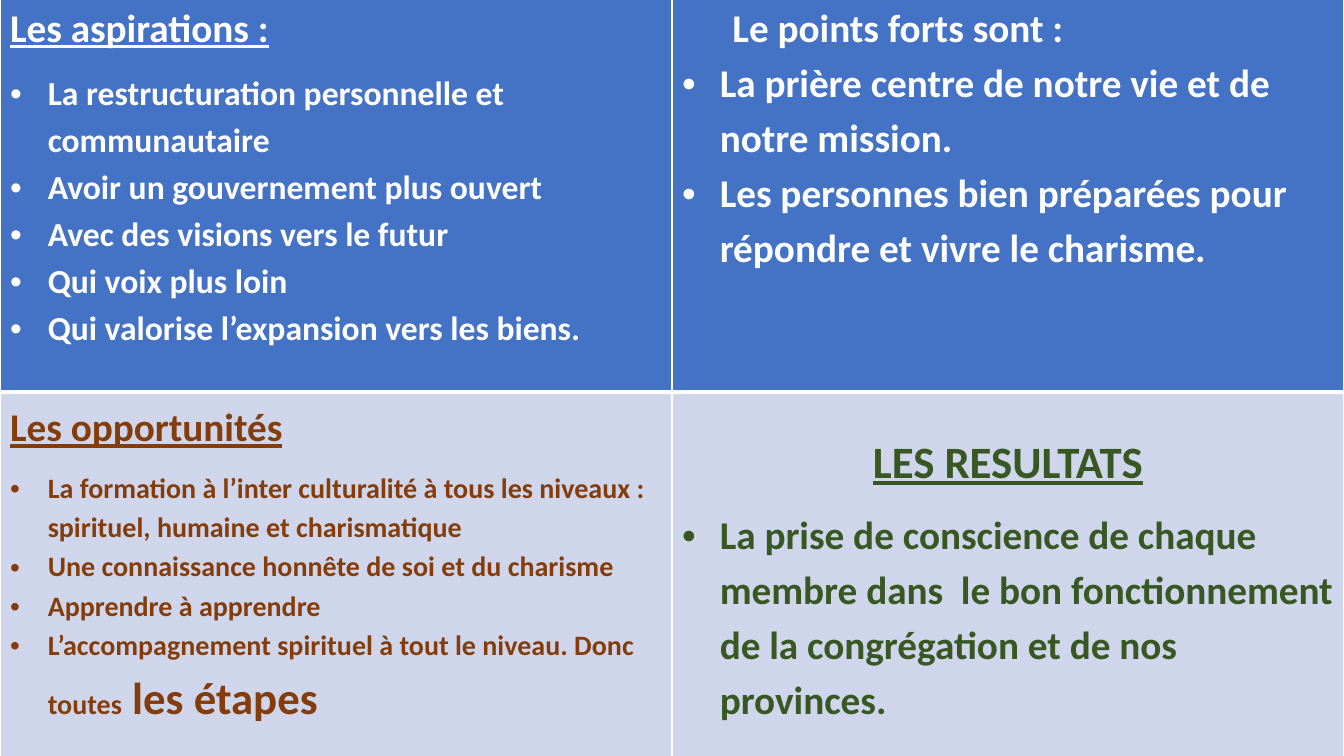
from lxml.etree import SubElement as Sub
from pptx import Presentation
from pptx.dml.color import RGBColor as RGB
from pptx.enum.text import PP_ALIGN as Align
from pptx.oxml.ns import qn
from pptx.util import Cm, Pt

WHITE = RGB(0xFF, 0xFF, 0xFF)
BLUE = RGB(0x44, 0x72, 0xC4)
PALE = RGB(0xCF, 0xD5, 0xEA)
BROWN = RGB(0x84, 0x3C, 0x0B)
GREEN = RGB(0x38, 0x57, 0x23)

HOPES = {
    "head": ("Les aspirations :", 28, True, Align.LEFT, 0, 10),
    "items": [
        [("La restructuration personnelle et communautaire", 24)],
        [("Avoir un gouvernement plus ouvert", 24)],
        [("Avec des visions vers le futur", 24)],
        [("Qui voix plus loin", 24)],
        [("Qui valorise l’expansion vers les biens.", 24)],
    ],
    "after": 10, "ink": WHITE, "fill": BLUE, "top": 0.13,
}
FORCES = {
    "head": ("Le points forts sont :", 28, False, Align.LEFT, 1.27, 0),
    "items": [
        [("La prière centre de notre vie et de notre mission.", 28)],
        [("Les personnes bien préparées pour répondre et vivre le charisme.", 28)],
    ],
    "after": 0, "ink": WHITE, "fill": BLUE, "top": 0.13,
}
CHANCES = {
    "head": ("Les opportunités", 28, True, Align.LEFT, 0, 10),
    "items": [
        [("La formation à l’inter culturalité à tous les niveaux : "
          "spirituel, humaine et charismatique", 20)],
        [("Une connaissance honnête de soi et du charisme", 20)],
        [("Apprendre à apprendre", 20)],
        [("L’accompagnement spirituel à tout le niveau. Donc toutes", 20),
         (" les étapes", 32)],
    ],
    "after": 10, "ink": BROWN, "fill": PALE, "top": 0.13,
}
RESULTS = {
    "head": ("LES RESULTATS", 32, True, Align.CENTER, 0, 10),
    "items": [
        [("La prise de conscience de chaque membre dans  le bon fonctionnement "
          "de la congrégation et de nos provinces.", 28)],
    ],
    "after": 10, "ink": GREEN, "fill": PALE, "top": 0.9,
}
GRID = [[HOPES, FORCES], [CHANCES, RESULTS]]
EDGES = [{"L": 1, "R": 1, "T": 1, "B": 3}, {"L": 1, "R": 1, "B": 1}]
HEIGHTS = [10.06, 10.52]
WIDTH, TOP, INDENT = 16.93, -0.18, 0.95


def add_run(para, text, size, ink, under=False):
    run = para.add_run()
    run.text = text
    font = run.font
    font.name, font.size, font.bold = "Calibri", Pt(size), True
    font.underline = under
    font.color.rgb = ink


def indent(para, left, hang=0):
    props = para._p.get_or_add_pPr()
    props.set("marL", str(Cm(left)))
    props.set("indent", str(-Cm(hang)))
    return props


def space(para, after):
    para.line_spacing = 1.15
    para.space_after = Pt(after)


def set_edges(cell, edges):
    props = cell._tc.get_or_add_tcPr()
    for side, width in edges.items():
        line = Sub(props, qn("a:ln" + side), w=str(Pt(width)))
        fill = Sub(line, qn("a:solidFill"))
        Sub(fill, qn("a:srgbClr"), val=str(WHITE))


def fill_cell(cell, data, edges):
    set_edges(cell, edges)
    cell.fill.solid()
    cell.fill.fore_color.rgb = data["fill"]
    cell.margin_top = Cm(data["top"])
    frame = cell.text_frame
    text, size, under, align, left, after = data["head"]
    head = frame.paragraphs[0]
    indent(head, left)
    head.alignment = align
    space(head, after)
    add_run(head, text, size, data["ink"], under)
    for item in data["items"]:
        para = frame.add_paragraph()
        props = indent(para, INDENT, INDENT)
        Sub(props, qn("a:buFont"), typeface="Arial")
        Sub(props, qn("a:buChar"), char="•")
        space(para, data["after"] if item is data["items"][-1] else 0)
        for words, points in item:
            add_run(para, words, points, data["ink"])


def main():
    deck = Presentation()
    deck.slide_width, deck.slide_height = Cm(2 * WIDTH), Cm(19.05)
    slide = deck.slides.add_slide(deck.slide_layouts[6])
    table = slide.shapes.add_table(
        2, 2, Cm(0), Cm(TOP), Cm(2 * WIDTH), Cm(sum(HEIGHTS))).table
    table.first_row = table.horz_banding = False
    for col in table.columns:
        col.width = Cm(WIDTH)
    for r, height in enumerate(HEIGHTS):
        table.rows[r].height = Cm(height)
        for c, data in enumerate(GRID[r]):
            fill_cell(table.cell(r, c), data, EDGES[r])
    deck.save("out.pptx")


if __name__ == "__main__":
    main()
